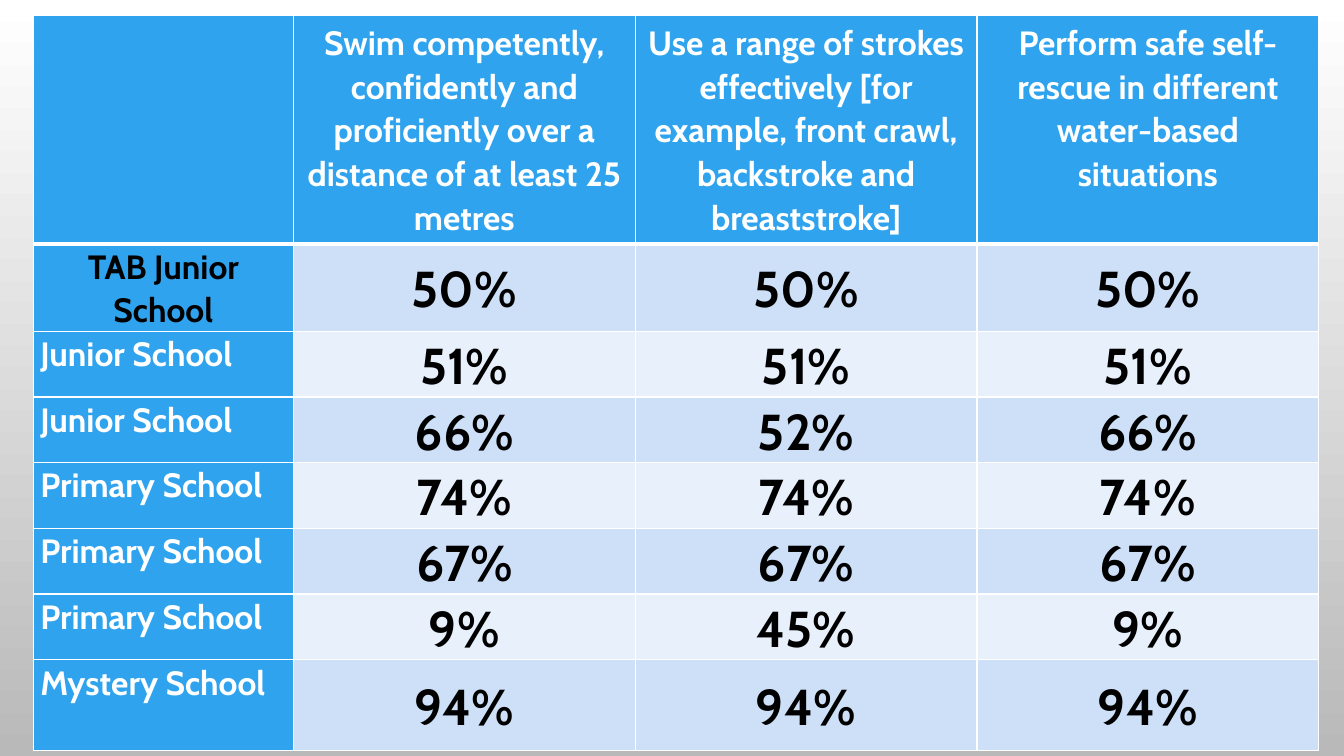
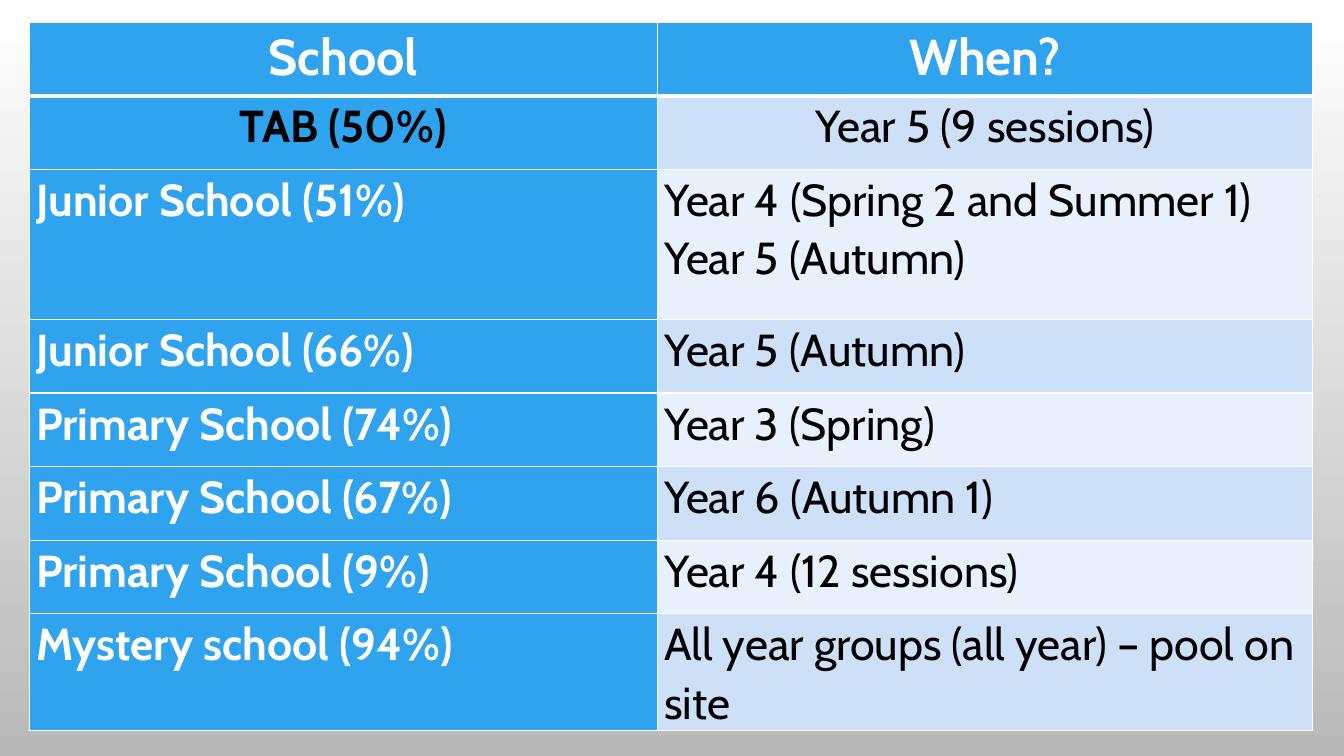
from lxml.etree import SubElement
from pptx import Presentation
from pptx.dml.color import RGBColor
from pptx.enum.text import MSO_ANCHOR, PP_ALIGN
from pptx.oxml.ns import qn
from pptx.util import Inches, Pt

COLORS = {"blue": "2FA3EE", "band": "CDE0F8", "pale": "E8F0FC",
          "white": "FFFFFF", "black": "000000", "grey": "B9B9B9"}
FONT = "Cabin"

TABLES = [
    {
        "at": (0.33, 0.15),
        "cols": [2.58, 3.39, 3.39, 3.39],
        "heights": [2.27, 0.86] + [0.65] * 5 + [0.9],
        "head": {"size": 24, "top": 0.05},
        "label": {"size": 24},
        "value": {"size": 36, "bold": True, "align": PP_ALIGN.CENTER,
                  "anchor": MSO_ANCHOR.MIDDLE},
        "rows": [
            ("",
             "Swim competently, confidently and proficiently over a distance of at least 25 metres",
             "Use a range of strokes effectively [for example, front crawl, backstroke and breaststroke]",
             "Perform safe self-rescue in different water-based situations"),
            ("TAB Junior School", "50%", "50%", "50%"),
            ("Junior School", "51%", "51%", "51%"),
            ("Junior School", "66%", "52%", "66%"),
            ("Primary School", "74%", "74%", "74%"),
            ("Primary School", "67%", "67%", "67%"),
            ("Primary School", "9%", "45%", "9%"),
            ("Mystery School", "94%", "94%", "94%"),
        ],
    },
    {
        "at": (0.29, 0.22),
        "cols": [6.23, 6.5],
        "heights": [0.73, 0.73, 1.49] + [0.73] * 4 + [1.15],
        "head": {"size": 36},
        "label": {"size": 32},
        "value": {"size": 32, "bold": False},
        "rows": [
            ("School", "When?"),
            ("TAB (50%)", "Year 5 (9 sessions)"),
            ("Junior School (51%)", "Year 4 (Spring 2 and Summer 1)\nYear 5 (Autumn)"),
            ("Junior School (66%)", "Year 5 (Autumn)"),
            ("Primary School (74%)", "Year 3 (Spring)"),
            ("Primary School (67%)", "Year 6 (Autumn 1)"),
            ("Primary School (9%)", "Year 4 (12 sessions)"),
            ("Mystery school (94%)", "All year groups (all year) – pool on site"),
        ],
    },
]


def rgb(name):
    return RGBColor.from_string(COLORS[name])


def set_borders(cell, row):
    widths = {"lnL": 1, "lnR": 1, "lnT": 3 if row == 1 else 1, "lnB": 3 if row == 0 else 1}
    tc_pr = cell._tc.get_or_add_tcPr()
    for tag, width in widths.items():
        ln = SubElement(tc_pr, qn(f"a:{tag}"), w=str(Pt(width)))
        fill = SubElement(ln, qn("a:solidFill"))
        SubElement(fill, qn("a:srgbClr"), val=COLORS["white"])


def cell_format(table, row, col):
    fmt = {"bold": True, "color": "white", "fill": "blue", "top": 0,
           "align": PP_ALIGN.CENTER if row < 2 else PP_ALIGN.LEFT,
           "anchor": MSO_ANCHOR.TOP}
    if row == 0:
        return fmt | table["head"]
    if col == 0:
        return fmt | {"color": "black" if row == 1 else "white"} | table["label"]
    return fmt | {"color": "black", "fill": "band" if row % 2 else "pale"} | table["value"]


def fill_cell(cell, text, row, fmt):
    set_borders(cell, row)
    cell.fill.solid()
    cell.fill.fore_color.rgb = rgb(fmt["fill"])
    box = {"margin_left": Inches(0.07), "margin_right": Inches(0.07),
           "margin_top": Inches(fmt["top"]), "margin_bottom": 0,
           "vertical_anchor": fmt["anchor"]}
    for name, value in box.items():
        setattr(cell, name, value)
    cell.text_frame.text = text
    font = {"name": FONT, "size": Pt(fmt["size"]), "bold": fmt["bold"]}
    for p in cell.text_frame.paragraphs:
        p.alignment = fmt["align"]
        p.line_spacing = 1.07
        for r in p.runs:
            for name, value in font.items():
                setattr(r.font, name, value)
            r.font.color.rgb = rgb(fmt["color"])


def add_school_table(s, table):
    rows, cols, heights = table["rows"], table["cols"], table["heights"]
    size = (sum(cols), sum(heights))
    tbl = s.shapes.add_table(len(rows), len(cols),
                             *(Inches(v) for v in table["at"] + size)).table
    for column, width in zip(tbl.columns, cols):
        column.width = Inches(width)
    for i, (texts, height) in enumerate(zip(rows, heights)):
        tbl.rows[i].height = Inches(height)
        for j, text in enumerate(texts):
            fill_cell(tbl.cell(i, j), text, i, cell_format(table, i, j))


def set_background(master):
    fill = master.background.fill
    fill.gradient()
    fill.gradient_angle = 270
    for stop, position, name in zip(fill.gradient_stops, (0, 1), ("white", "grey")):
        stop.position = position
        stop.color.rgb = rgb(name)


def main():
    prs = Presentation()
    prs.slide_width, prs.slide_height = Inches(13.33), Inches(7.5)
    set_background(prs.slide_master)
    for table in TABLES:
        add_school_table(prs.slides.add_slide(prs.slide_layouts[6]), table)
    prs.save("out.pptx")


if __name__ == "__main__":
    main()
